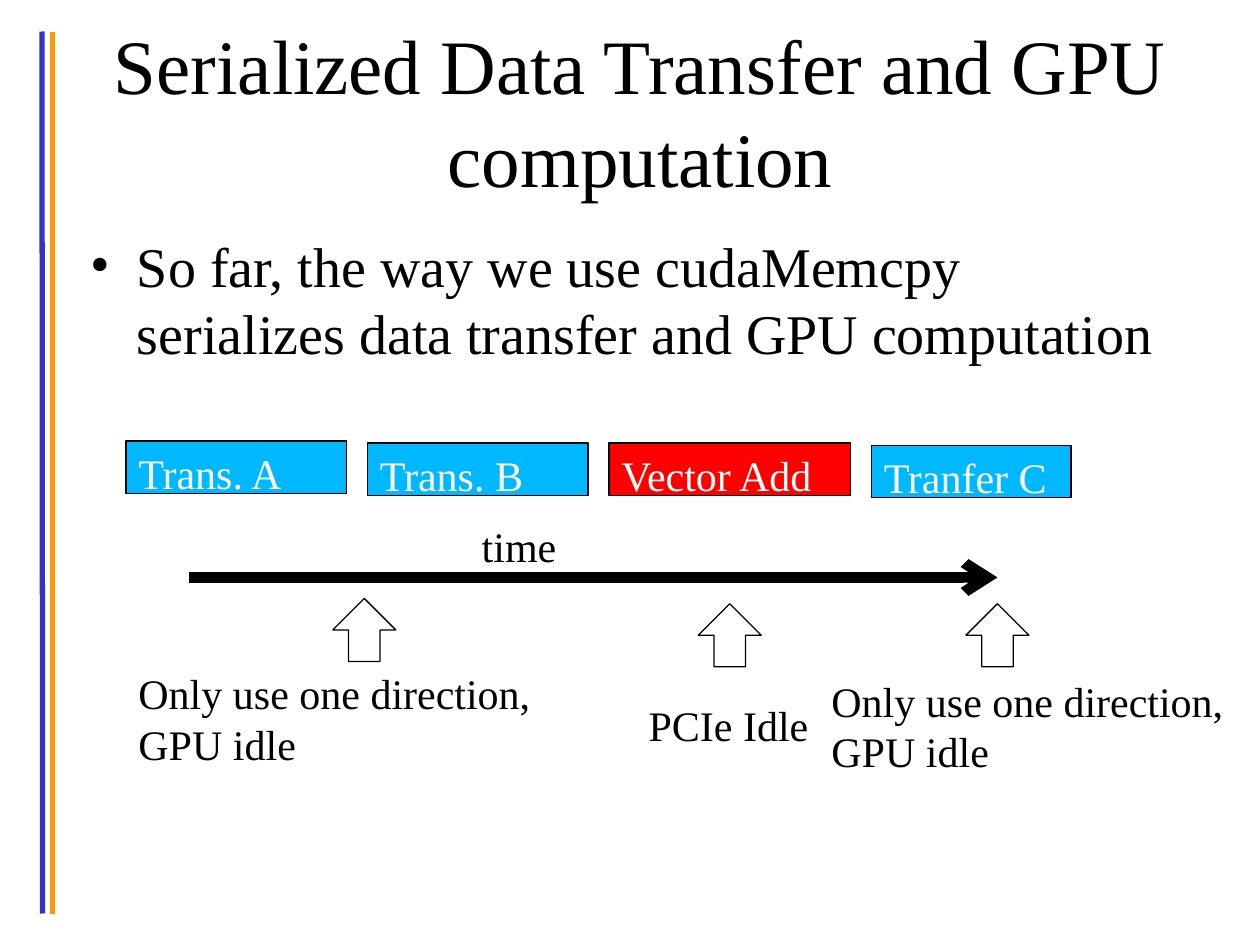
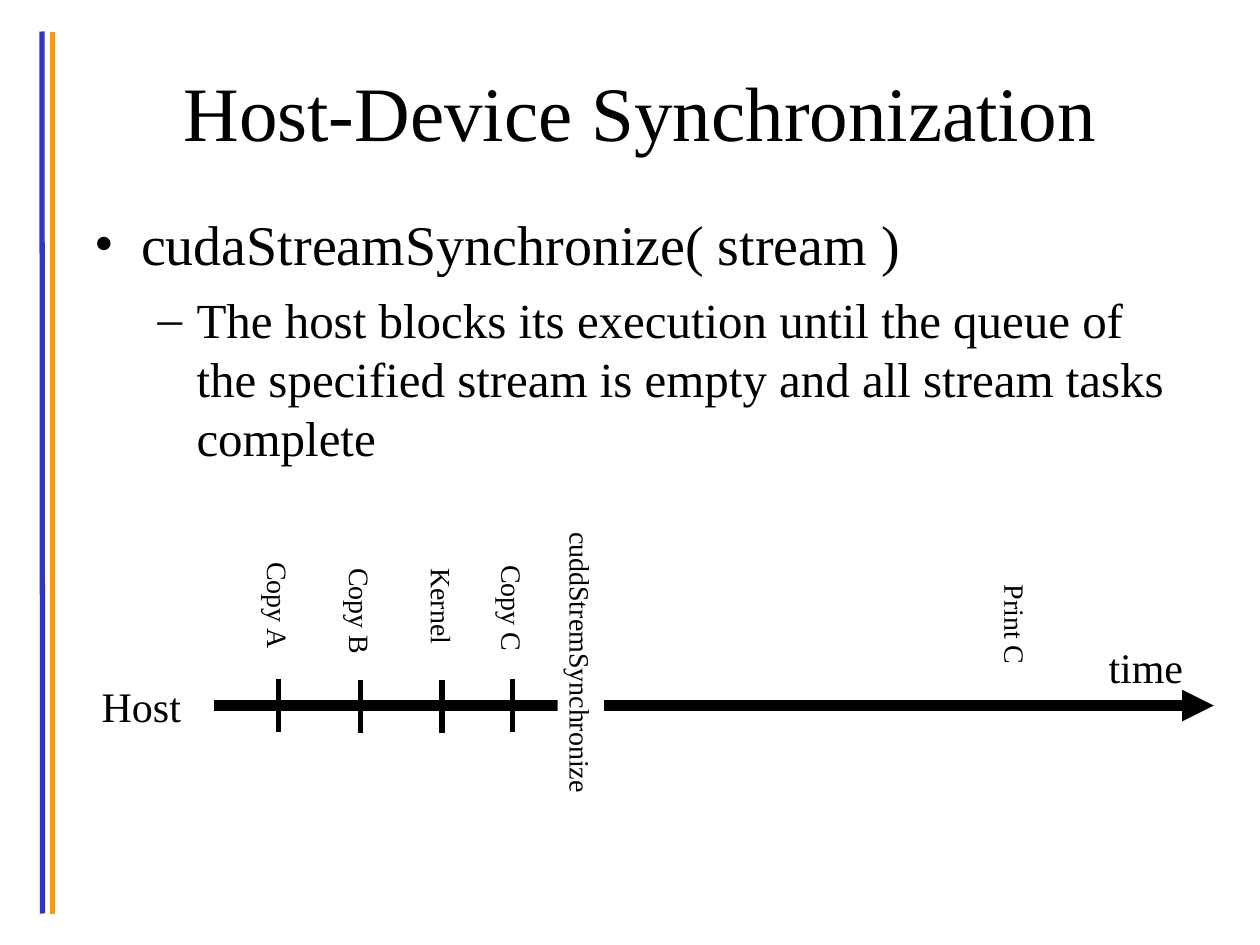
from typing import NamedTuple

from lxml.etree import SubElement
from pptx import Presentation
from pptx.dml.color import RGBColor as Rgb
from pptx.enum.shapes import MSO_CONNECTOR as Conn, MSO_SHAPE as Kind
from pptx.enum.text import MSO_ANCHOR as Anchor, MSO_AUTO_SIZE as Fit, PP_ALIGN as Align
from pptx.oxml.ns import qn
from pptx.util import Inches, Pt

FONT = "Times New Roman"
INK = {"black": "000000", "white": "FFFFFF", "blue": "3333CC",
       "gold": "FF9900", "sky": "00B8FF", "red": "FF0000"}
WIDE, HIGH = Inches(10), Inches(7.5)
COLS, ROWS = 120, 90


class Box(NamedTuple):
    col: float
    row: float
    cols: float
    rows: float


class Line(NamedTuple):
    col: float
    row: float
    end_col: float
    end_row: float
    ink: str = "black"
    weight: float = 3
    head: str = ""


class Task(NamedTuple):
    text: str
    row: float
    cols: float
    ink: str


class Note(NamedTuple):
    box: Box
    lines: tuple[str, ...]
    wrap: bool = False


class Item(NamedTuple):
    text: str
    size: float
    mark: str
    left: float
    hang: float
    before: float
    level: int = 0


class Call(NamedTuple):
    text: str
    col: float
    row: float
    cols: float
    fill: str = ""


BARS = (Line(4, 3, 4.06, 87, "blue"), Line(5, 3, 5, 87, "gold"))
TITLE = Box(9, 3, 104, 15)

TASKS = (Task("Trans. A", 42, 21, "sky"), Task("Trans. B", 42.2, 21, "sky"),
         Task("Vector Add", 42.2, 23, "red"), Task("Tranfer C", 42.4, 19, "sky"))
IDLE = ("Only use one direction,", "GPU idle")
NOTES = (Note(Box(44.7, 49, 9.6, 6), ("time",)),
         Note(Box(12, 63, 40, 11), IDLE),
         Note(Box(60.6, 66, 17.8, 6), ("PCIe Idle",)),
         Note(Box(78, 63.7, 40, 11), IDLE))
ARROWS = ((31.7, 57), (66.5, 57.5), (92, 57.5))

ENDS = (Note(Box(8.5, 64.2, 11, 6), ("Host",), True),
        Note(Box(104.4, 60.5, 9.6, 6), ("time",)))
CALLS = (Call("Copy A", 26.5, 57.7, 10.7), Call("Copy B", 34.3, 58.3, 10.7),
         Call("Kernel", 42.1, 57.8, 9.7), Call("Copy C", 48.8, 58, 10.7),
         Call("Print C", 96.7, 59.6, 10.2),
         Call("cuddStremSynchronize", 55.3, 63.3, 27.6, "white"))
TICKS = ((26.5, 64.7), (34.3, 64.8), (42.1, 64.8), (48.8, 64.7))


def across(cols: float) -> int:
    return round(WIDE * cols / COLS)


def down(rows: float) -> int:
    return round(HIGH * rows / ROWS)


def frame(box: Box) -> tuple[int, int, int, int]:
    return across(box.col), down(box.row), across(box.cols), down(box.rows)


def tint(name: str) -> Rgb:
    return Rgb.from_string(INK[name])


def style(para, size: float, ink: str = "black", align=Align.LEFT) -> None:
    para.alignment = align
    para.font.name = FONT
    para.font.size = Pt(size)
    para.font.color.rgb = tint(ink)


def place(shape, box: Box, anchor):
    shape.left, shape.top, shape.width, shape.height = frame(box)
    body = shape.text_frame
    body.margin_left = body.margin_top = body.margin_right = body.margin_bottom = 0
    body.vertical_anchor = anchor
    body.word_wrap = True
    body.auto_size = Fit.NONE
    return body


def draw_line(slide, line: Line) -> None:
    link = slide.shapes.add_connector(
        Conn.STRAIGHT, across(line.col), down(line.row),
        across(line.end_col), down(line.end_row))
    link.line.color.rgb = tint(line.ink)
    link.line.width = Pt(line.weight)
    if line.head:
        SubElement(link.line._get_or_add_ln(), qn("a:tailEnd"), type=line.head)
    SubElement(link._element.spPr, qn("a:effectLst"))


def draw_shape(slide, kind, box: Box, fill: str = "", edge: str = ""):
    shape = slide.shapes.add_shape(kind, *frame(box))
    shape.shadow.inherit = False
    if fill:
        shape.fill.solid()
        shape.fill.fore_color.rgb = tint(fill)
    else:
        shape.fill.background()
    if edge:
        shape.line.color.rgb = tint(edge)
        shape.line.width = Pt(0.75)
    else:
        shape.line.fill.background()
    return shape


def write(shape, lines: tuple[str, ...], size: float, ink: str = "black",
          wrap: bool = False, fit=Fit.SHAPE_TO_FIT_TEXT) -> None:
    body = shape.text_frame
    body.text = "\n".join(lines)
    body.vertical_anchor = Anchor.TOP
    body.word_wrap = wrap
    body.auto_size = fit
    for para in body.paragraphs:
        style(para, size, ink)


def draw_note(slide, note: Note) -> None:
    write(slide.shapes.add_textbox(*frame(note.box)), note.lines, 24, wrap=note.wrap)


def draw_call(slide, call: Call) -> None:
    rows = 4.4
    box = Box(call.col - call.cols / 2, call.row - rows / 2, call.cols, rows)
    if call.fill:
        shape = draw_shape(slide, Kind.RECTANGLE, box, call.fill)
    else:
        shape = slide.shapes.add_textbox(*frame(box))
    write(shape, (call.text,), 16)
    shape.rotation = 90


def fill_list(body, items: tuple[Item, ...]) -> None:
    body.text = "\n".join(item.text for item in items)
    for para, item in zip(body.paragraphs, items):
        style(para, item.size)
        para.level = item.level
        para.space_before = Pt(item.before)
        props = para._p.get_or_add_pPr()
        props.set("marL", str(Inches(item.left)))
        props.set("indent", str(Inches(-item.hang)))
        SubElement(props, qn("a:buFont"), typeface=FONT)
        SubElement(props, qn("a:buChar"), char=item.mark)


def add_slide(deck, title: str, box: Box, items: tuple[Item, ...]):
    slide = deck.slides.add_slide(deck.slide_layouts[1])
    for bar in BARS:
        draw_line(slide, bar)
    head = place(slide.shapes.title, TITLE, Anchor.MIDDLE)
    head.text = title
    style(head.paragraphs[0], 44, align=Align.CENTER)
    fill_list(place(slide.placeholders[1], box, Anchor.TOP), items)
    return slide


def serial(deck) -> None:
    slide = add_slide(
        deck, "Serialized Data Transfer and GPU computation", Box(8.6, 22, 104, 60),
        (Item("So far, the way we use cudaMemcpy serializes data transfer "
              "and GPU computation", 32, "•", 0.37, 0.37, 8),))
    col, gap = 12, 2
    for task in TASKS:
        box = Box(col, task.row, task.cols, 5)
        shape = draw_shape(slide, Kind.RECTANGLE, box, task.ink, "black")
        write(shape, (task.text,), 24, "white", True, Fit.NONE)
        col += task.cols + gap
    draw_line(slide, Line(18, 55, 95, 55, weight=6, head="arrow"))
    for note in NOTES:
        draw_note(slide, note)
    for left, top in ARROWS:
        draw_shape(slide, Kind.UP_ARROW, Box(left, top, 6, 6), edge="black")


def sync(deck) -> None:
    slide = add_slide(
        deck, "Host-Device Synchronization", Box(9, 20, 104, 60),
        (Item("cudaStreamSynchronize( stream )", 32, "•", 0.37, 0.37, 8),
         Item("The host blocks its execution until the queue of the specified "
              "stream is empty and all stream tasks complete",
              28, "–", 0.81, 0.31, 7, 1)))
    draw_line(slide, Line(20.4, 67.2, 115.6, 67.2, weight=6, head="triangle"))
    for note in ENDS:
        draw_note(slide, note)
    for col, row in TICKS:
        draw_line(slide, Line(col, row, col, row + 5))
    for call in CALLS:
        draw_call(slide, call)


def main() -> None:
    deck = Presentation()
    deck.slide_width, deck.slide_height = WIDE, HIGH
    serial(deck)
    sync(deck)
    deck.save("out.pptx")


if __name__ == "__main__":
    main()
